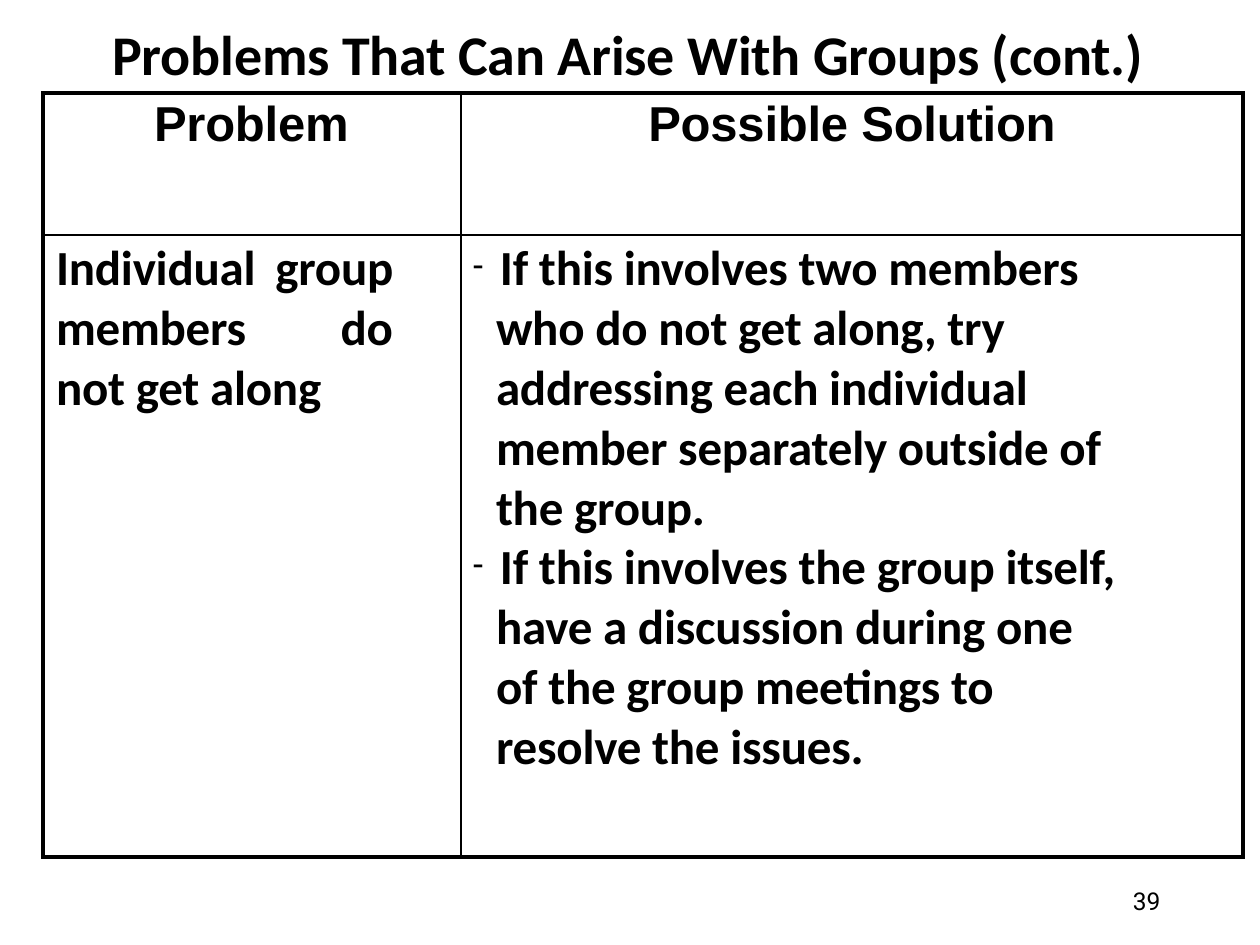
"""Build the slide on group problems and their possible solutions."""
from lxml import etree
from pptx import Presentation, util as u
from pptx.dml.color import RGBColor
from pptx.enum import text
from pptx.oxml.ns import qn

BLACK = RGBColor(0, 0, 0)
SCALE = 914400 / 126
LEFT, MID, JUST = text.PP_ALIGN.LEFT, text.PP_ALIGN.CENTER, text.PP_ALIGN.JUSTIFY

TITLE = "Problems That Can Arise With Groups (cont.)"
PAGE = "39"
HEADS = ["Problem", "Possible Solution"]
ISSUE = ["Individual group members do\vnot get along"]
FIXES = [
    "If this involves two members who do not get along, try addressing "
    "each individual member separately outside of the group.",
    "If this involves the group itself, have a discussion during one "
    "of the group meetings to resolve the issues.",
]
COLS, ROWS = [418, 782], [142, 622]
CELLS = [
    [([HEADS[0]], dict(font="Arial", left=111, before=2.9)),
     ([HEADS[1]], dict(font="Arial", align=MID, before=2.9))],
    [(ISSUE, dict(left=13, right=68, align=JUST, before=1.8)),
     (FIXES, dict(left=35, hang=23, tab=39, right=123, before=1.8))],
]


def px(n):
    return u.Emu(round(n * SCALE))


def style(run, font, size, bold):
    run.font.name, run.font.size, run.font.bold = font, u.Pt(size), bold
    run.font.color.rgb = BLACK
    if bold:
        run.font._element.set("spc", "-10")


def write(frame, lines, font="Calibri", size=28, bold=True, align=LEFT,
          left=0, hang=0, tab=0, before=0, lead=None):
    for i, line in enumerate(lines):
        para = frame.add_paragraph() if i else frame.paragraphs[0]
        props = para._p.get_or_add_pPr()
        props.set("marL", str(px(left)))
        props.set("indent", str(-px(hang)))
        if tab:
            etree.SubElement(props, qn("a:buChar"), char="-")
            tabs = etree.SubElement(props, qn("a:tabLst"))
            etree.SubElement(tabs, qn("a:tab"), pos=str(px(tab)), algn="l")
            run = para.add_run()
            run.text = "\t"
            style(run, font, 18, False)
        para.alignment = align
        para.space_before = u.Pt(0 if i else before)
        if lead:
            para.line_spacing = u.Pt(lead)
        for j, part in enumerate(line.split("\v")):
            if j:
                para.add_line_break()
            run = para.add_run()
            run.text = part
            style(run, font, size, bold)


def inset(box, top=0, right=0):
    box.margin_left = box.margin_bottom = 0
    box.margin_top, box.margin_right = px(top), px(right)


def edge(cell, row, col):
    thick = dict(L=col == 0, R=col == 1, T=row == 0, B=row == 1)
    props = cell._tc.get_or_add_tcPr()
    for i, (side, outer) in enumerate(thick.items()):
        line = etree.Element(qn("a:ln" + side), w=str(u.Pt(2.25 if outer else 1)))
        fill = etree.SubElement(line, qn("a:solidFill"))
        etree.SubElement(fill, qn("a:srgbClr"), val=str(BLACK))
        props.insert(i, line)


def main():
    deck = Presentation()
    deck.slide_width, deck.slide_height = px(1260), px(945)
    slide = deck.slides.add_slide(deck.slide_layouts[5])

    title = slide.shapes.title
    title.left, title.top, title.width, title.height = map(px, (111, 18, 1042, 70))
    frame = title.text_frame
    inset(frame, top=1)
    frame.vertical_anchor = text.MSO_ANCHOR.TOP
    frame.auto_size = text.MSO_AUTO_SIZE.NONE
    write(frame, [TITLE], size=32, left=1, before=1.1)

    shape = slide.shapes.add_table(2, 2, *map(px, (43, 93, sum(COLS), sum(ROWS))))
    table = shape.table
    table.first_row = table.horz_banding = False
    for col, width in zip(table.columns, COLS):
        col.width = px(width)
    for r, height in enumerate(ROWS):
        table.rows[r].height = px(height)
        for c, (lines, form) in enumerate(CELLS[r]):
            cell = table.cell(r, c)
            form = dict(form)
            inset(cell, top=4, right=form.pop("right", 0))
            cell.fill.background()
            edge(cell, r, c)
            write(cell.text_frame, lines, **form)

    box = slide.shapes.add_textbox(*map(px, (1128, 886, 38, 32)))
    inset(box.text_frame)
    box.text_frame.word_wrap = True
    write(box.text_frame, [PAGE], font="Roboto", size=14, bold=False, left=5, lead=16.6)

    deck.save("out.pptx")


if __name__ == "__main__":
    main()
